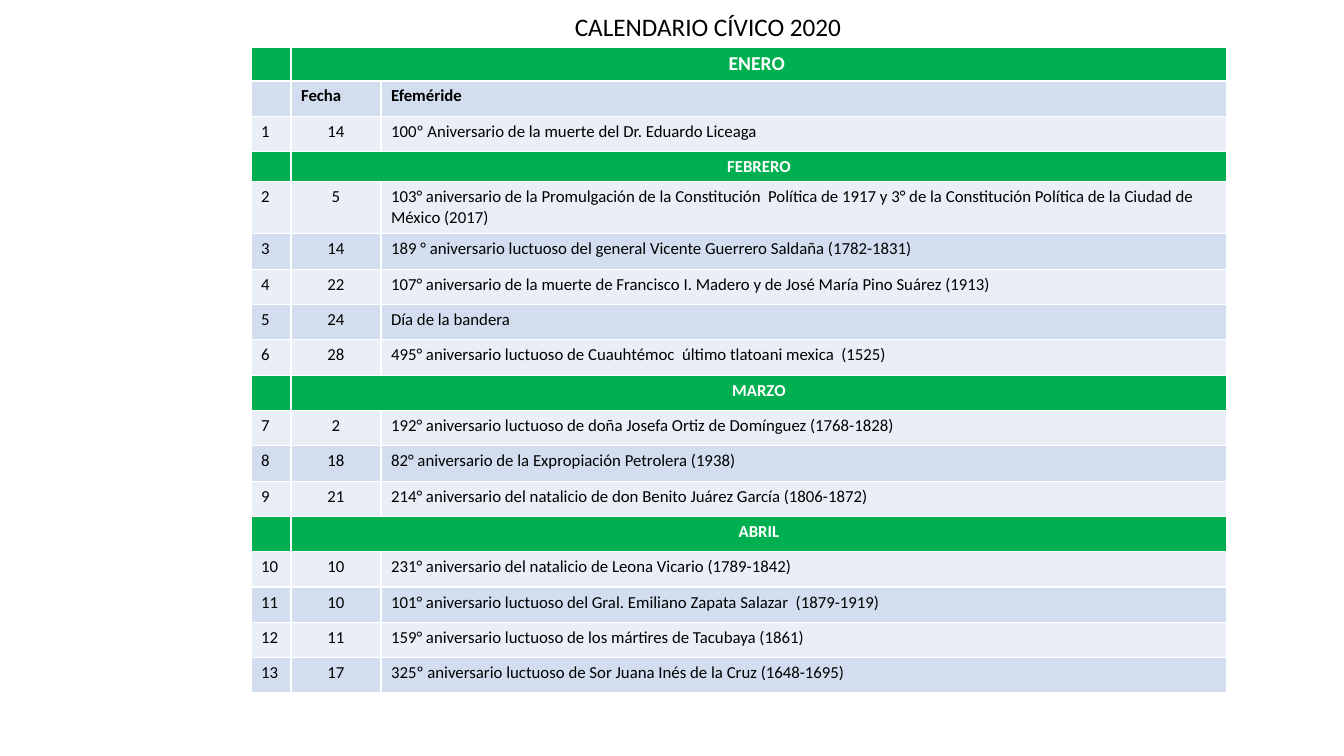
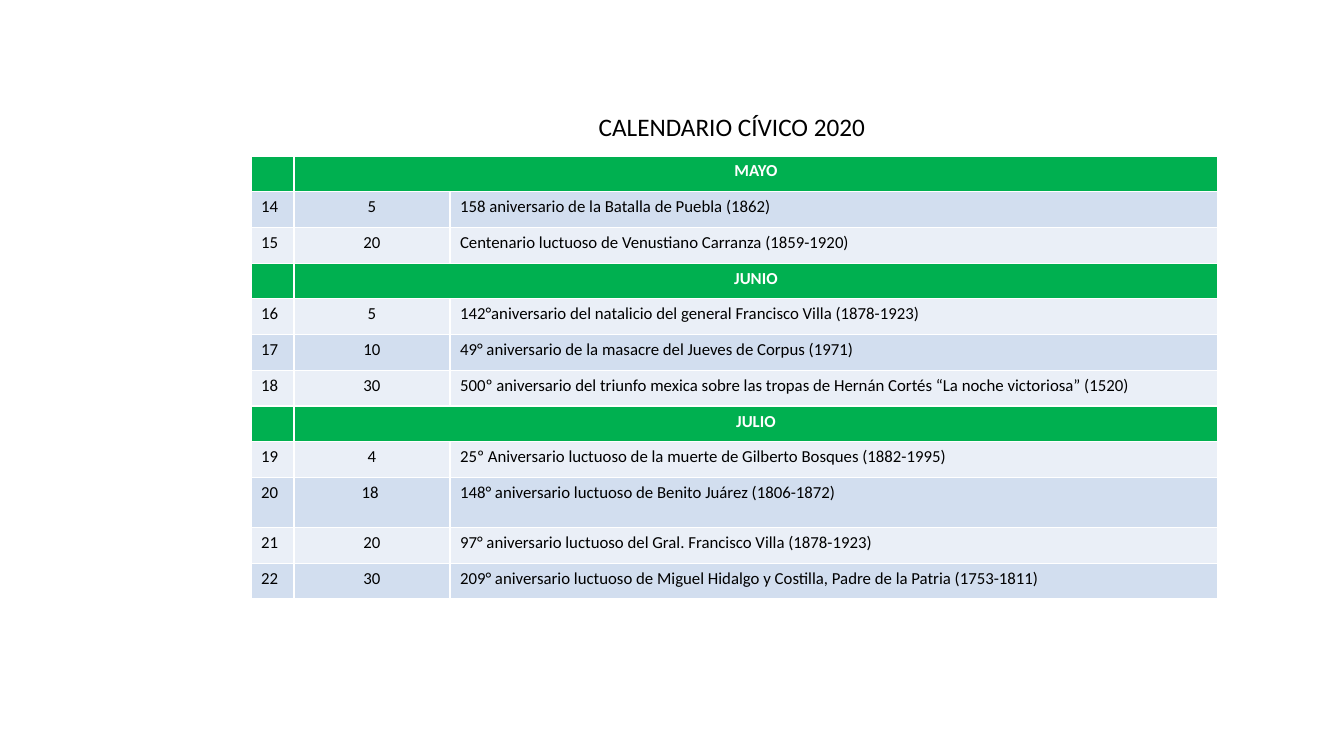
"""Builds two slides of a civic calendar, each a title over a table of months."""
import itertools

import pptx
import pptx.dml.color
import pptx.enum.text
import pptx.oxml.ns
import pptx.util
from lxml import etree

TITLE = "CALENDARIO CÍVICO 2020"
HEAD = ("Fecha", "Efeméride")

PAGES = [
    {
        "title": (212, -8, 992, 55),
        "top": 47, "high": 646, "cols": (40, 90, 846),
        "odd": {0: 34, 3: 30, 4: 52}, "first": 14,
        "months": [
            ("ENERO ", [
                HEAD,
                ("14", "100º Aniversario de la muerte del Dr. Eduardo Liceaga"),
            ]),
            ("FEBRERO", [
                ("5", "103° aniversario de la Promulgación de la Constitución  Política de 1917 "
                      "y 3° de la Constitución Política de la Ciudad de México (2017)"),
                ("14", "189 ° aniversario luctuoso del general Vicente Guerrero Saldaña (1782-1831)"),
                ("22", "107° aniversario de la muerte de Francisco I. Madero "
                       "y de José María Pino Suárez (1913)"),
                ("24", "Día de la bandera"),
                ("28", "495° aniversario luctuoso de Cuauhtémoc  último tlatoani mexica  (1525)"),
            ]),
            ("MARZO", [
                ("2", "192° aniversario luctuoso de doña Josefa Ortiz de Domínguez (1768-1828)"),
                ("18", "82° aniversario de la Expropiación Petrolera (1938)"),
                ("21", "214° aniversario del natalicio de don Benito Juárez García (1806-1872)"),
            ]),
            ("ABRIL", [
                ("10", "231° aniversario del natalicio de Leona Vicario (1789-1842)"),
                ("10", "101° aniversario luctuoso del Gral. Emiliano Zapata Salazar  (1879-1919)"),
                ("11", "159° aniversario luctuoso de los mártires de Tacubaya (1861)"),
                ("17", "325º aniversario luctuoso de Sor Juana Inés de la Cruz (1648-1695)"),
            ]),
        ],
    },
    {
        "title": (560, 108, 344, 39),
        "top": 156, "high": 443, "cols": (43, 156, 768),
        "odd": {9: 50}, "first": 12,
        "months": [
            ("MAYO", [
                ("5", "158 aniversario de la Batalla de Puebla (1862)"),
                ("20", "Centenario luctuoso de Venustiano Carranza (1859-1920)"),
            ]),
            ("JUNIO", [
                ("5", "142°aniversario del natalicio del general Francisco Villa (1878-1923)"),
                ("10", "49° aniversario de la masacre del Jueves de Corpus (1971)"),
                ("30", "500º aniversario del triunfo mexica sobre las tropas de Hernán Cortés "
                       "“La noche victoriosa” (1520)"),
            ]),
            ("JULIO", [
                ("4", "25º Aniversario luctuoso de la muerte de Gilberto Bosques (1882-1995)"),
                ("18 ", "148° aniversario luctuoso de Benito Juárez (1806-1872)"),
                ("20", "97° aniversario luctuoso del Gral. Francisco Villa (1878-1923)"),
                ("30", "209° aniversario luctuoso de Miguel Hidalgo y Costilla, "
                       "Padre de la Patria (1753-1811)"),
            ]),
        ],
    },
]

THEME = {
    "font": "Calibri", "title": 18, "body": 12,
    "ink": "000000", "white": "FFFFFF", "month": "00B050",
    "bands": ("EAEFF7", "D2DEEF"),
}
LEFT = 251
SCALE = 914400 / 100.8
ALIGN = pptx.enum.text.PP_ALIGN


def px(size):
    """Turn px into EMU."""
    return pptx.util.Emu(round(size * SCALE))


def tint(name):
    """Give the colour for a hex name."""
    return pptx.dml.color.RGBColor.from_string(name)


def write(frame, text, size, ink, bold=False, align=ALIGN.LEFT):
    """Put one styled paragraph in a text frame."""
    para = frame.paragraphs[0]
    para.alignment = align
    font = para.font
    font.name, font.size, font.bold = THEME["font"], pptx.util.Pt(size), bold
    font.color.rgb = tint(ink)
    if text:
        para.add_run().text = text
    else:
        etree.SubElement(para._p, pptx.oxml.ns.qn("a:endParaRPr"), sz=str(size * 100))
    return para


def add_title(slide, box):
    """Add the calendar title."""
    frame = slide.shapes.add_textbox(*map(px, box)).text_frame
    frame.word_wrap = True
    frame.vertical_anchor = pptx.enum.text.MSO_ANCHOR.BOTTOM
    para = write(frame, TITLE, THEME["title"], THEME["ink"], align=ALIGN.CENTER)
    para.line_spacing = 0.9


def add_months(slide, page, count):
    """Add the table of months, numbering each event."""
    rows = []
    for month, events in page["months"]:
        rows.append((month, None))
        rows.extend(events)
    cols, odd = page["cols"], page["odd"]
    table = slide.shapes.add_table(
        len(rows), len(cols), px(LEFT), px(page["top"]), px(sum(cols)), px(page["high"])
    ).table
    table.horz_banding = False
    for col, wide in zip(table.columns, cols):
        col.width = px(wide)
    plain = (page["high"] - sum(odd.values())) / (len(rows) - len(odd))

    for i, row in enumerate(rows):
        table.rows[i].height = px(odd.get(i, plain))
        cells = table.rows[i].cells
        month, head = row[1] is None, row == HEAD
        fill = THEME["month"] if month else THEME["bands"][i % 2]
        for cell in cells:
            cell.fill.solid()
            cell.fill.fore_color.rgb = tint(fill)
        number = "" if month or head else str(next(count))
        size = page["first"] if i == 0 else THEME["body"]
        ink = THEME["white"] if month else THEME["ink"]
        aligns = (ALIGN.LEFT, ALIGN.LEFT if head else ALIGN.CENTER, ALIGN.LEFT)
        if month:
            cells[1].merge(cells[2])
        for cell, text, align in zip(cells, (number, *row), aligns):
            write(cell.text_frame, text, size, ink, month or head, align)


def main():
    """Build and save the slides."""
    deck = pptx.Presentation()
    deck.slide_width, deck.slide_height = px(1344), px(756)
    count = itertools.count(1)
    for page in PAGES:
        slide = deck.slides.add_slide(deck.slide_layouts[6])
        add_title(slide, page["title"])
        add_months(slide, page, count)
    deck.save("out.pptx")


if __name__ == "__main__":
    main()
